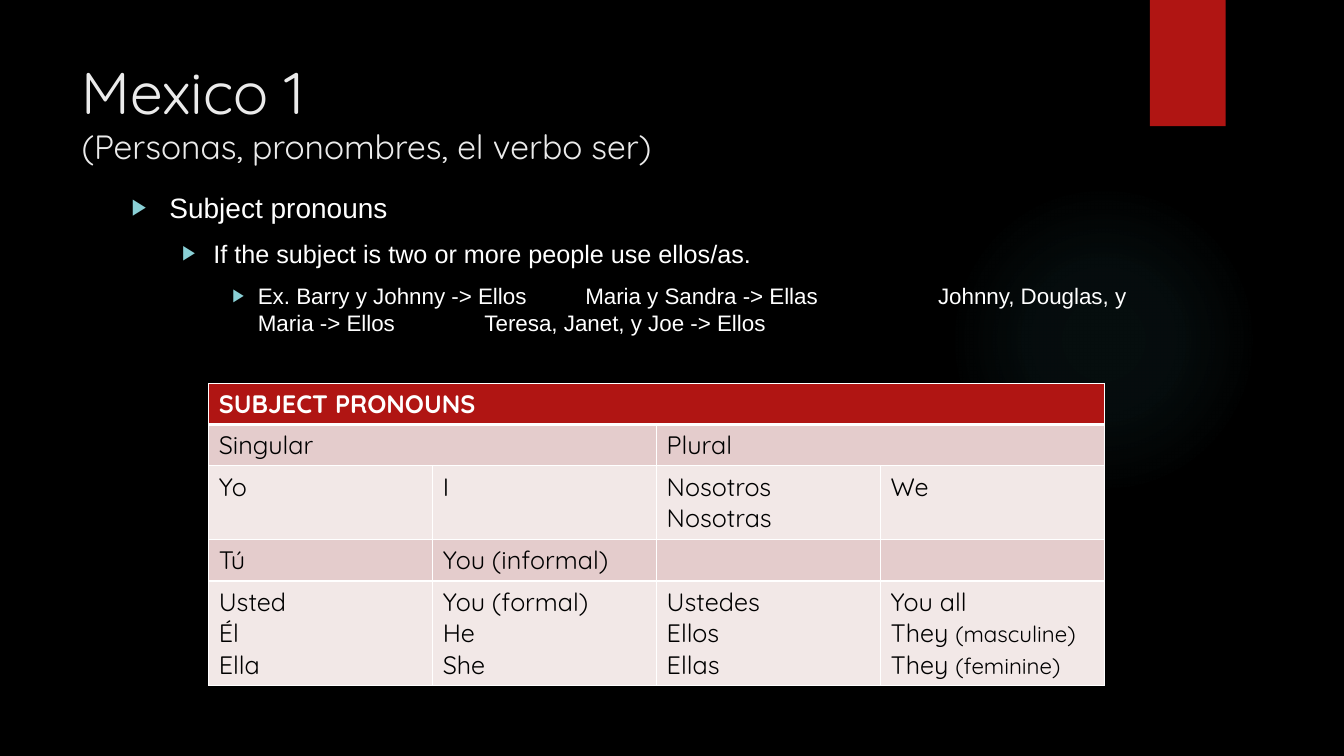
from lxml.etree import SubElement
from pptx import Presentation
from pptx.dml.color import RGBColor
from pptx.enum.shapes import MSO_SHAPE
from pptx.enum.text import MSO_ANCHOR, MSO_AUTO_SIZE, PP_ALIGN
from pptx.oxml import parse_xml
from pptx.oxml.ns import nsdecls, qn
from pptx.util import Cm, Pt

COLORS = {
    "background": "000000",
    "glow": "50B9C1",
    "red": "B01513",
    "title": "EBEBEB",
    "white": "FFFFFF",
    "black": "000000",
    "bullet": "8AD0D6",
    "dark_band": "E4CCCC",
    "light_band": "F2E8E7",
}
GLOW_STOPS = [(0, 7), (36, 6), (69, 0)]
OUTLINE = [
    ("Subject pronouns", 20, 0.95, 0.95),
    ("If the subject is two or more people use ellos/as.", 18, 2.06, 0.79),
    ("Ex. Barry y Johnny -> Ellos\t\tMaria y Sandra -> Ellas\t\t\tJohnny, Douglas, y "
     "Maria -> Ellos\t\tTeresa, Janet, y Joe -> Ellos", 16, 3.18, 0.64),
]
PRONOUNS = [
    ["SUBJECT PRONOUNS", "", "", ""],
    ["Singular", "", "Plural", ""],
    ["Yo", "I", "Nosotros\nNosotras", "We"],
    ["Tú", "You (informal)", "", ""],
    ["Usted\nÉl\nElla", "You (formal)\nHe\nShe", "Ustedes\nEllos\nEllas",
     "You all\nThey |(masculine)\nThey |(feminine)"],
]
ROW_HEIGHTS = [1.04, 1.04, 1.86, 1.04, 2.64]
MERGES = [(0, 0, 3), (1, 0, 1), (1, 2, 3)]


def rgb(name):
    return RGBColor.from_string(COLORS[name])


def add_span(para, text, size=18, font="Quicksand", color="black", bold=False):
    span = para.add_run()
    span.text = text
    span.font.size = Pt(size)
    span.font.name = font
    span.font.bold = bold
    span.font.color.rgb = rgb(color)


def add_plain_shape(page, kind, left, top, width, height):
    shape = page.shapes.add_shape(kind, Cm(left), Cm(top), Cm(width), Cm(height))
    shape.shadow.inherit = False
    shape.line.fill.background()
    return shape


def add_glow(page):
    glow = add_plain_shape(page, MSO_SHAPE.OVAL, 23.9, 4.65, 7.82, 7.82)
    stops = "".join(
        f'<a:gs pos="{position * 1000}"><a:srgbClr val="{COLORS["glow"]}">'
        f'<a:alpha val="{alpha * 1000}"/></a:srgbClr></a:gs>'
        for position, alpha in GLOW_STOPS
    )
    gradient = parse_xml(
        f'<a:gradFill {nsdecls("a")}><a:gsLst>{stops}</a:gsLst><a:path path="circle">'
        '<a:fillToRect l="50000" t="50000" r="50000" b="50000"/></a:path></a:gradFill>'
    )
    glow._element.spPr.find(qn("a:prstGeom")).addnext(gradient)


def add_ribbon(page):
    ribbon = add_plain_shape(page, MSO_SHAPE.RECTANGLE, 28.98, 0, 1.91, 3.18)
    ribbon.fill.solid()
    ribbon.fill.fore_color.rgb = rgb("red")


def fill_title(page):
    title = page.shapes.title
    title.left, title.top, title.width, title.height = Cm(1.8), Cm(1.27), Cm(26.14), Cm(3.89)
    frame = title.text_frame
    frame.word_wrap = True
    frame.auto_size = MSO_AUTO_SIZE.NONE
    frame.vertical_anchor = MSO_ANCHOR.TOP
    para = frame.paragraphs[0]
    para.alignment = PP_ALIGN.LEFT
    add_span(para, "Mexico 1", size=42, color="title")
    para.add_line_break()
    add_span(para, "(Personas, pronombres, el verbo ser)", size=24, color="title")


def add_bullet(para, left, hanging):
    properties = para._p.get_or_add_pPr()
    properties.set("marL", str(Cm(left)))
    properties.set("indent", str(-Cm(hanging)))
    properties.set("defTabSz", str(Cm(1.27)))
    color = SubElement(properties, qn("a:buClr"))
    SubElement(color, qn("a:srgbClr"), val=COLORS["bullet"])
    SubElement(properties, qn("a:buSzPct"), val="80000")
    SubElement(properties, qn("a:buFont"), typeface="Arial")
    SubElement(properties, qn("a:buChar"), char="▶")


def add_outline(page):
    box = page.shapes.add_textbox(Cm(3.07), Cm(4.67), Cm(27), Cm(11.66))
    frame = box.text_frame
    frame.word_wrap = True
    for level, (text, size, left, hanging) in enumerate(OUTLINE):
        para = frame.add_paragraph() if level else frame.paragraphs[0]
        para.level = level
        add_bullet(para, left, hanging)
        para.space_before = Pt(10 if level else 0)
        add_span(para, text, size=size, font="Arial", color="white")


def add_borders(cell, top, bottom):
    properties = cell._tc.get_or_add_tcPr()
    for side, width in (("lnL", 1), ("lnR", 1), ("lnT", top), ("lnB", bottom)):
        line = SubElement(properties, qn(f"a:{side}"), w=str(Pt(width)))
        fill = SubElement(line, qn("a:solidFill"))
        SubElement(fill, qn("a:srgbClr"), val=COLORS["white"])


def fill_cell(cell, text, row):
    add_borders(cell, top=3 if row == 1 else 1, bottom=1 if row else 3)
    band = "dark_band" if row % 2 else "light_band"
    cell.fill.solid()
    cell.fill.fore_color.rgb = rgb(band if row else "red")
    if not text:
        return
    for index, line in enumerate(text.split("\n")):
        para = cell.text_frame.add_paragraph() if index else cell.text_frame.paragraphs[0]
        for piece, size in zip(line.split("|"), (18, 16)):
            add_span(para, piece, size=size, color="black" if row else "white", bold=row == 0)


def add_pronoun_table(page):
    frame = page.shapes.add_table(
        len(PRONOUNS), 4, Cm(5.26), Cm(9.66), Cm(22.58), Cm(sum(ROW_HEIGHTS)))
    table = frame.table
    for row, texts in enumerate(PRONOUNS):
        table.rows[row].height = Cm(ROW_HEIGHTS[row])
        for column, text in enumerate(texts):
            fill_cell(table.cell(row, column), text, row)
    for row, first, last in MERGES:
        table.cell(row, first).merge(table.cell(row, last))


def main():
    deck = Presentation()
    deck.slide_width, deck.slide_height = Cm(33.87), Cm(19.05)
    page = deck.slides.add_slide(deck.slide_layouts[5])
    page.background.fill.solid()
    page.background.fill.fore_color.rgb = rgb("background")
    add_glow(page)
    add_ribbon(page)
    fill_title(page)
    add_outline(page)
    add_pronoun_table(page)
    deck.save("out.pptx")


if __name__ == "__main__":
    main()
